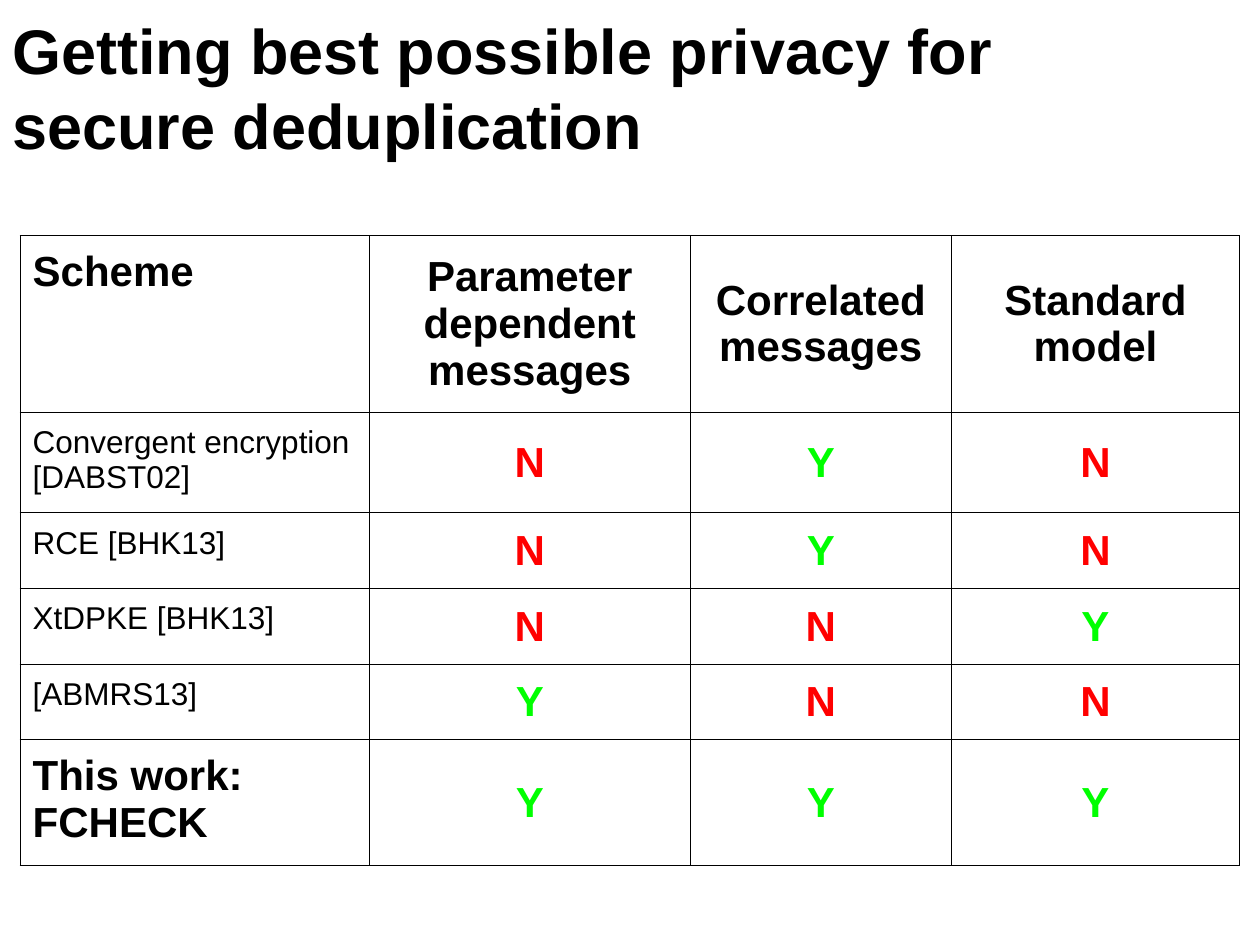
from dataclasses import dataclass

import pptx
import pptx.dml.color
import pptx.enum.text
import pptx.oxml
import pptx.oxml.ns
import pptx.util

Inches = pptx.util.Inches
Align = pptx.enum.text.PP_ALIGN
Anchor = pptx.enum.text.MSO_ANCHOR


@dataclass
class Style:
    size: int
    color: str = "000000"
    bold: bool = True
    align: Align = Align.LEFT


@dataclass
class Scheme:
    name: str
    marks: str
    style: Style
    height: float = 0.57


HEAD = Style(24)
TOPIC = Style(24, align=Align.CENTER)
PLAIN = Style(18, bold=False)
MARKS = {
    "Y": Style(24, "00FF00", align=Align.CENTER),
    "N": Style(24, "FF0000", align=Align.CENTER),
}
TITLE = "Getting best possible privacy for\nsecure deduplication"
TOPICS = ["Parameter dependent messages", "Correlated messages", "Standard model"]
SCHEMES = [
    Scheme("Convergent encryption\n[DABST02]", "NYN", PLAIN, 0.76),
    Scheme("RCE [BHK13]", "NYN", PLAIN),
    Scheme("XtDPKE [BHK13]", "NNY", PLAIN),
    Scheme("[ABMRS13]", "YNN", PLAIN),
    Scheme("This work:\nFCHECK", "YYY", HEAD, 0.94),
]
WIDTHS = [2.77, 2.55, 2.07, 2.29]
HEIGHTS = [1.32] + [item.height for item in SCHEMES]


def paint(value: str) -> pptx.dml.color.RGBColor:
    return pptx.dml.color.RGBColor.from_string(value)


def write(frame, text: str, style: Style) -> None:
    frame.text = text
    for para in frame.paragraphs:
        para.alignment = style.align
        para.font.name = "Arial"
        para.font.size = pptx.util.Pt(style.size)
        para.font.bold = style.bold
        para.font.color.rgb = paint(style.color)


def inset(box) -> None:
    for side in ("left", "top", "right", "bottom"):
        setattr(box, f"margin_{side}", Inches(0.1))


def border(cell) -> None:
    props = cell._tc.get_or_add_tcPr()
    for side in "LRTB":
        props.append(pptx.oxml.parse_xml(
            f'<a:ln{side} {pptx.oxml.ns.nsdecls("a")} w="{pptx.util.Pt(0.75)}">'
            '<a:solidFill><a:srgbClr val="000000"/></a:solidFill>'
            f'</a:ln{side}>'
        ))


def draw_cell(cell, text: str, style: Style) -> None:
    inset(cell)
    border(cell)
    cell.fill.background()
    centred = style.align == Align.CENTER
    cell.vertical_anchor = Anchor.MIDDLE if centred else Anchor.TOP
    write(cell.text_frame, text, style)


def draw_title(slide) -> None:
    box = slide.shapes.add_textbox(Inches(0), Inches(-0.01), Inches(9), Inches(1.25))
    frame = box.text_frame
    frame.word_wrap = True
    frame.vertical_anchor = Anchor.TOP
    inset(frame)
    write(frame, TITLE, Style(36))


def draw_table(slide) -> None:
    rows = [[("Scheme", HEAD)] + [(topic, TOPIC) for topic in TOPICS]]
    for item in SCHEMES:
        rows.append([(item.name, item.style)] + [(m, MARKS[m]) for m in item.marks])
    table = slide.shapes.add_table(
        len(rows), len(WIDTHS), Inches(0.16), Inches(1.87),
        Inches(sum(WIDTHS)), Inches(sum(HEIGHTS)),
    ).table
    table.first_row = False
    table.horz_banding = False
    for column, width in zip(table.columns, WIDTHS):
        column.width = Inches(width)
    for row, height, items in zip(table.rows, HEIGHTS, rows):
        row.height = Inches(height)
        for cell, (text, style) in zip(row.cells, items):
            draw_cell(cell, text, style)


def main() -> None:
    deck = pptx.Presentation()
    deck.slide_width = Inches(10)
    deck.slide_height = Inches(7.5)
    slide = deck.slides.add_slide(deck.slide_layouts[6])
    draw_title(slide)
    draw_table(slide)
    deck.save("out.pptx")


if __name__ == "__main__":
    main()
